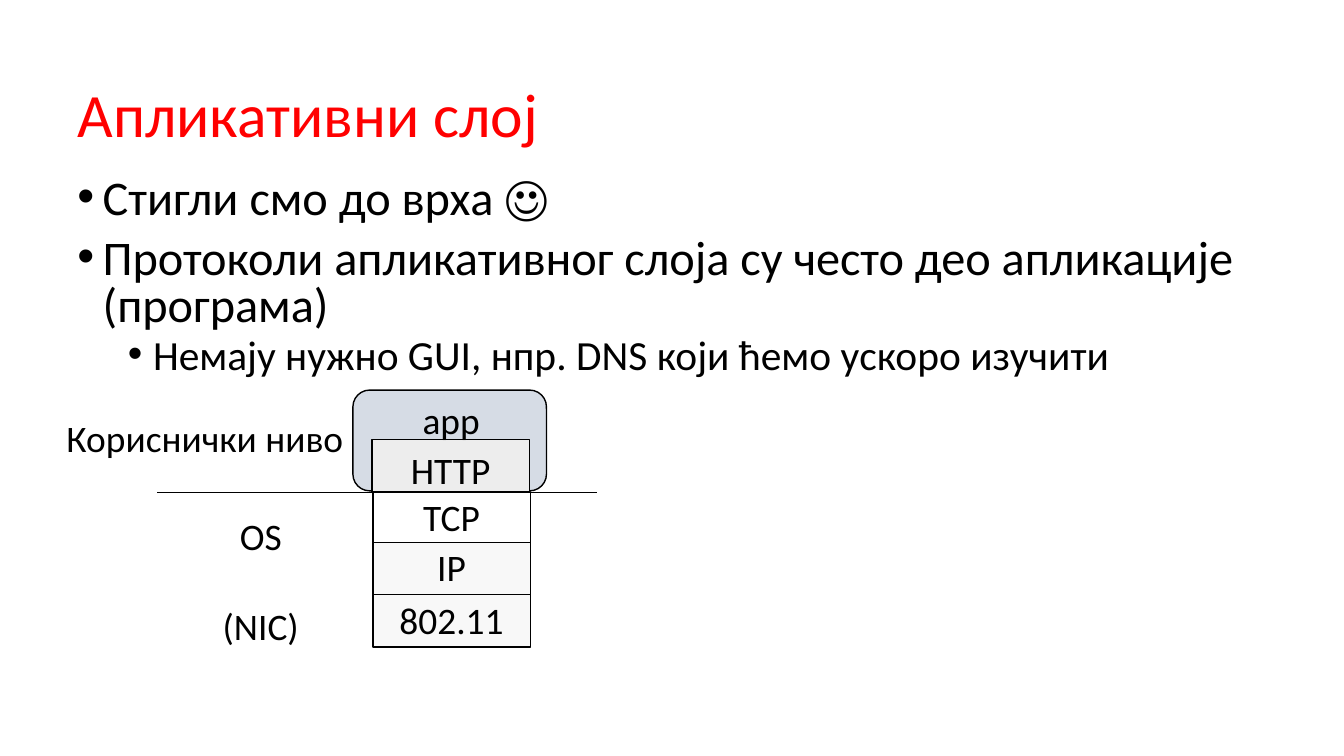
from lxml import etree
from pptx import Presentation
from pptx.dml.color import RGBColor
from pptx.enum.shapes import MSO_CONNECTOR as Connector, MSO_SHAPE as Shape
from pptx.enum.text import MSO_ANCHOR as Anchor, PP_ALIGN as Align
from pptx.oxml.ns import qn
from pptx.util import Pt

PX = 9144
RED = RGBColor(0xFF, 0x00, 0x00)
BLACK = RGBColor(0x00, 0x00, 0x00)
BLUE_GREY = RGBColor(0xD6, 0xDC, 0xE5)
LIGHT_GREY = RGBColor(0xED, 0xED, 0xED)
PALE_GREY = RGBColor(0xF8, 0xF8, 0xF8)
FONT = "Calibri"
LABEL_SIZE = 26.7


def px(*lengths):
    """Turn pixel lengths into EMU."""
    return [length * PX for length in lengths]


def write(paragraph, text, size=LABEL_SIZE, color=BLACK, align=Align.LEFT,
          spacing=None, before=0, indent=None):
    """Put formatted text into a paragraph, bulleted when an indent is given."""
    run = paragraph.add_run()
    run.text = text
    run.font.name, run.font.size = FONT, Pt(size)
    run.font.color.rgb = color
    paragraph.alignment = align
    paragraph.space_before = Pt(before)
    if spacing:
        paragraph.line_spacing = spacing
    if indent:
        properties = paragraph._p.get_or_add_pPr()
        properties.set("marL", str(indent * PX))
        properties.set("indent", str(-25 * PX))
        etree.SubElement(properties, qn("a:buFont")).set("typeface", "Arial")
        etree.SubElement(properties, qn("a:buChar")).set("char", "•")


def add_text_box(slide, box, wrap=True, anchor=Anchor.TOP):
    """Add a text box and return its text frame."""
    frame = slide.shapes.add_textbox(*px(*box)).text_frame
    frame.word_wrap = wrap
    frame.vertical_anchor = anchor
    return frame


def add_block(slide, kind, box, fill=None):
    """Add a black-outlined shape, hollow when no fill is given."""
    shape = slide.shapes.add_shape(kind, *px(*box))
    shape.shadow.inherit = False
    if fill is None:
        shape.fill.background()
    else:
        shape.fill.solid()
        shape.fill.fore_color.rgb = fill
    shape.line.color.rgb = BLACK
    shape.line.width = Pt(1)
    return shape


def add_title(slide, box):
    """Place the slide title."""
    frame = add_text_box(slide, box, anchor=Anchor.MIDDLE)
    write(frame.paragraphs[0], "Апликативни слој", size=44, color=RED, spacing=0.9)


def add_bullets(slide, box):
    """Place the two-level bullet list."""
    frame = add_text_box(slide, box)
    bullets = [
        (0, "Стигли смо до врха ☺"),
        (0, "Протоколи апликативног слоја су често део апликације (програма)"),
        (1, "Немају нужно GUI, нпр. DNS који ћемо ускоро изучити"),
    ]
    for index, (level, text) in enumerate(bullets):
        paragraph = frame.add_paragraph() if index else frame.paragraphs[0]
        paragraph.level = level
        write(paragraph, text, size=(34.5, 29.6)[level], spacing=0.8,
              before=(10, 5)[level], indent=(25, 75)[level])


def add_layer(slide, box, text, fill, top_inset=0, bottom_inset=0):
    """Place one named layer of the protocol stack."""
    frame = add_block(slide, Shape.RECTANGLE, box, fill).text_frame
    frame.word_wrap = False
    frame.vertical_anchor = Anchor.MIDDLE
    frame.margin_top, frame.margin_bottom = px(top_inset, bottom_inset)
    write(frame.paragraphs[0], text, align=Align.CENTER)


def add_boundary(slide, left, right, top):
    """Draw the line between user level and operating system."""
    line = slide.shapes.add_connector(Connector.STRAIGHT, *px(left, top, right, top))
    line.line.color.rgb = BLACK
    line.line.width = Pt(0.5)
    etree.SubElement(line._element.spPr, qn("a:effectLst"))


def add_stack(slide, box):
    """Place the application, its protocol layers and the level labels."""
    left, top, width, height = box
    boundary = top + 101
    add_block(slide, Shape.ROUNDED_RECTANGLE, (left + 294, top, 192, 100), BLUE_GREY)
    layer_left, layer_width, layer_height = left + 314, 156, 52
    layers = [("TCP", 0, None), ("IP", 50, PALE_GREY), ("802.11", 102, PALE_GREY)]
    for text, offset, fill in layers:
        add_layer(slide, (layer_left, boundary + offset, layer_width, layer_height),
                  text, fill, bottom_inset=3)
    add_layer(slide, (layer_left - 1, boundary - layer_height, layer_width, layer_height),
              "HTTP", LIGHT_GREY, top_inset=7)
    add_boundary(slide, left + 100, left + width, boundary)
    labels = [
        ("app", 353, 2, 77, Align.CENTER),
        ("OS", 172, 117, 62, Align.LEFT),
        ("Кориснички ниво", 0, 20, 297, Align.LEFT),
        ("(NIC)", 155, 206, 97, Align.LEFT),
    ]
    for text, x, y, label_width, align in labels:
        frame = add_text_box(slide, (left + x, top + y, label_width, 55), wrap=False)
        write(frame.paragraphs[0], text, align=align)


def main():
    """Build and save the slide."""
    presentation = Presentation()
    presentation.slide_width, presentation.slide_height = px(1333, 750)
    slide = presentation.slides.add_slide(presentation.slide_layouts[6])
    add_title(slide, (67, 54, 1267, 125))
    add_bullets(slide, (67, 172, 1169, 222))
    add_stack(slide, (56, 387, 536, 255))
    presentation.save("out.pptx")


if __name__ == "__main__":
    main()
